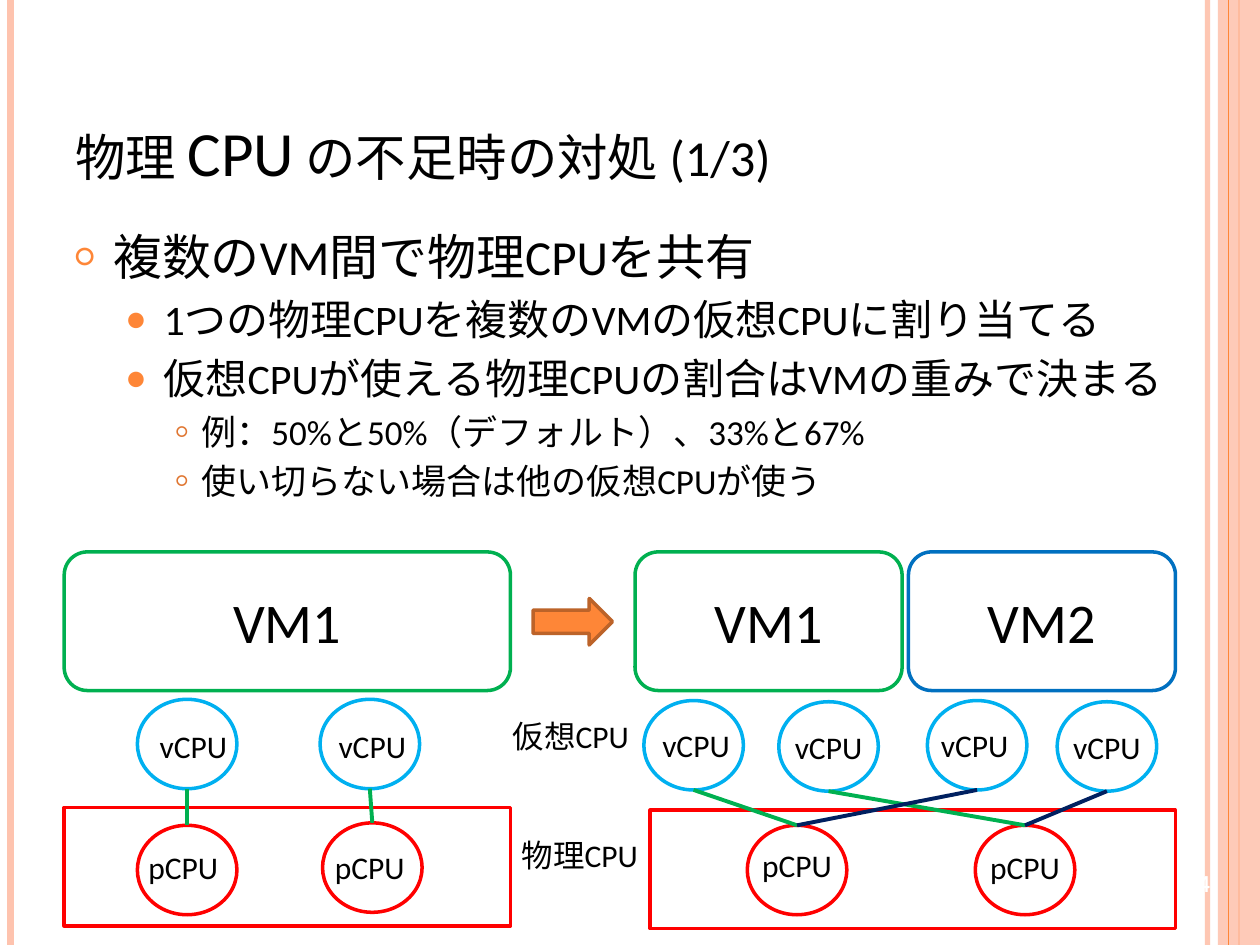
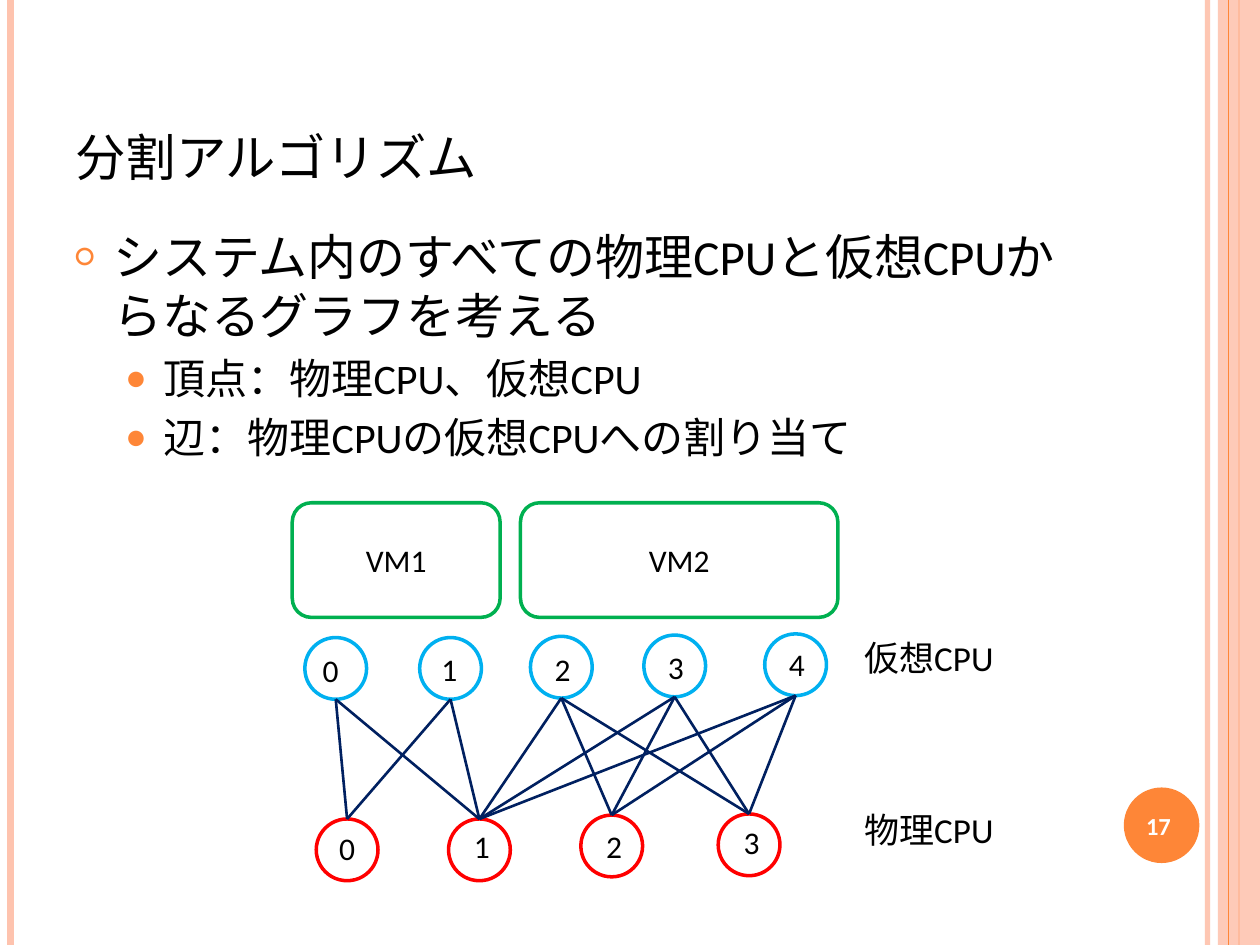
"""Builds two slides on sharing physical CPUs among virtual machines."""
import pptx
import pptx.dml.color
import pptx.enum.shapes
import pptx.enum.text
import pptx.oxml
import pptx.oxml.ns
import pptx.util

Pt = pptx.util.Pt
RGBColor = pptx.dml.color.RGBColor
Kind = pptx.enum.shapes.MSO_SHAPE
Align = pptx.enum.text.PP_ALIGN
Anchor = pptx.enum.text.MSO_ANCHOR

FONT = "Calibri"
BLACK = RGBColor(0, 0, 0)
WHITE = RGBColor(255, 255, 255)
PEACH = RGBColor(0xFE, 0xC3, 0xAE)
ORANGE = RGBColor(0xFE, 0x86, 0x37)
RUST = RGBColor(0xE0, 0x76, 0x31)
BROWN = RGBColor(0xBC, 0x63, 0x29)
RED = RGBColor(255, 0, 0)
GREEN = RGBColor(0, 0xB0, 0x50)
BLUE = RGBColor(0, 0x70, 0xC0)
SKY = RGBColor(0, 0xB0, 0xF0)
NAVY = RGBColor(0, 0x20, 0x60)

WIDTH, HEIGHT = 720, 540
LEVELS = [
    dict(size=28, left=21.6, hang=21.6, mark="○", tint=ORANGE, scale=70,
         gap='<a:spcPts val="600"/>'),
    dict(size=24, left=50.4, hang=21.6, mark="●", tint=ORANGE, scale=80,
         gap='<a:spcPct val="20000"/>'),
    dict(size=20, left=72, hang=14.4, mark="○", tint=RUST, scale=60,
         gap='<a:spcPct val="20000"/>'),
]


def fade(item, share):
    """Make the colour of an item partly opaque."""
    for color in item._element.spPr.iter(pptx.oxml.ns.qn("a:srgbClr")):
        alpha = color.makeelement(pptx.oxml.ns.qn("a:alpha"), {"val": str(share * 1000)})
        color.append(alpha)


def write(frame, text, size=18, color=BLACK, bold=False, small=False,
          align=Align.CENTER, anchor=Anchor.MIDDLE, inset=(0, 0), first=True):
    """Write one formatted paragraph into a text frame."""
    frame.word_wrap = True
    frame.vertical_anchor = anchor
    frame.margin_left = frame.margin_right = Pt(inset[0])
    frame.margin_top = frame.margin_bottom = Pt(inset[1])
    para = frame.paragraphs[0] if first else frame.add_paragraph()
    para.alignment = align
    run = para.add_run()
    run.text = text
    run.font.name = FONT
    run.font.size = Pt(size)
    run.font.bold = bold
    run.font.color.rgb = color
    if small:
        run.font._element.set("cap", "small")
    return para


def frame(slide, x, y, w, h):
    """Add an empty text box and return its frame."""
    return slide.shapes.add_textbox(Pt(x), Pt(y), Pt(w), Pt(h)).text_frame


def shape(slide, kind, x, y, w, h, line=None, fill=None):
    """Add a preset shape with an optional outline and fill."""
    item = slide.shapes.add_shape(kind, Pt(x), Pt(y), Pt(w), Pt(h))
    item.shadow.inherit = False
    if fill is None:
        item.fill.background()
    else:
        item.fill.solid()
        item.fill.fore_color.rgb = fill
    if line is None:
        item.line.fill.background()
    else:
        item.line.color.rgb = line
        item.line.width = Pt(2)
    return item


def line(slide, start, end, color, width):
    """Add a straight line between two points."""
    item = slide.shapes.add_connector(
        pptx.enum.shapes.MSO_CONNECTOR.STRAIGHT, *map(Pt, (*start, *end)))
    item.line.color.rgb = color
    item.line.width = Pt(width)
    props = item._element.spPr
    props.append(props.makeelement(pptx.oxml.ns.qn("a:effectLst"), {}))
    return item


def rule(slide, x, color, width):
    """Add a line over the full slide height."""
    return line(slide, (x, 0), (x, HEIGHT), color, width)


def node(slide, text, x, y, w, h, color, dx=0, dy=0):
    """Draw a labelled CPU; return its top and bottom points."""
    shape(slide, Kind.OVAL, x, y, w, h, line=color)
    write(frame(slide, x + dx, y + dy, w, h), text)
    return (x + w / 2, y), (x + w / 2, y + h)


def row(slide, items, w, h, color):
    """Draw a row of CPUs given as text, place and label shift."""
    return [node(slide, text, x, y, w, h, color, dx, dy)
            for text, x, y, dx, dy in items]


def link(slide, uppers, lowers, pairs, color, width):
    """Join upper CPUs to lower CPUs by index."""
    for up, low in pairs:
        line(slide, uppers[up][1], lowers[low][0], color, width)


def guest(slide, text, x, y, w, h, color, size):
    """Draw a virtual machine box."""
    item = shape(slide, Kind.ROUNDED_RECTANGLE, x, y, w, h, line=color)
    write(item.text_frame, text, size=size)


def bullets(slide, w, h, lines):
    """Fill the body with bullets of the given levels."""
    body = frame(slide, 36, 126, w, h)
    for count, (level, text) in enumerate(lines):
        style = LEVELS[level]
        para = write(body, text, size=style["size"], align=Align.LEFT,
                     anchor=Anchor.TOP, inset=(7.2, 3.6), first=count == 0)
        props = para._p.get_or_add_pPr()
        props.set("marL", str(Pt(style["left"])))
        props.set("indent", str(-Pt(style["hang"])))
        parts = (
            f'<a:spcBef>{style["gap"]}</a:spcBef>',
            f'<a:buClr><a:srgbClr val="{style["tint"]}"/></a:buClr>',
            f'<a:buSzPct val="{style["scale"] * 1000}"/>',
            f'<a:buFont typeface="{FONT}"/>',
            f'<a:buChar char="{style["mark"]}"/>',
        )
        space = pptx.oxml.ns.nsdecls("a")
        root = pptx.oxml.parse_xml(f'<a:pPr {space}>{"".join(parts)}</a:pPr>')
        for part in list(root):
            props.append(part)


def start(deck, title, width):
    """Add a slide with its side bands and title."""
    slide = deck.slides.add_slide(deck.slide_layouts[6])
    fade(rule(slide, 690, PEACH, 3), 93)
    rule(slide, 6, PEACH, 4.5)
    rule(slide, 708, ORANGE, 1.5)
    fade(shape(slide, Kind.RECTANGLE, 696, 0, 24, HEIGHT, fill=PEACH), 87)
    rule(slide, 702, ORANGE, 0.75)
    write(frame(slide, 36, 21.6, width, 90), title, size=36, small=True,
          align=Align.LEFT, anchor=Anchor.BOTTOM, inset=(7.2, 3.6))
    return slide


def number(slide, text, x, y):
    """Write the slide number."""
    write(frame(slide, x, y, 48, 41), text, size=14, color=WHITE, bold=True)


def sharing(deck):
    """Build the slide on sharing physical CPUs."""
    slide = start(deck, "物理 CPU の不足時の対処 (1/3)", 588)
    bullets(slide, 648, 356, [
        (0, "複数のVM間で物理CPUを共有"),
        (1, "1つの物理CPUを複数のVMの仮想CPUに割り当てる"),
        (1, "仮想CPUが使える物理CPUの割合はVMの重みで決まる"),
        (2, "例：50%と50%（デフォルト）、33%と67%"),
        (2, "使い切らない場合は他の仮想CPUが使う"),
    ])
    number(slide, "4", 664, 484)
    shape(slide, Kind.RECTANGLE, 36.7, 461.5, 255, 67.7, line=RED)
    shape(slide, Kind.RECTANGLE, 371.5, 463, 300.2, 67.7, line=RED)
    size = (56.9, 51.1)
    virtual = row(slide, [
        ("vCPU", 78.5, 399.6, 3.6, 1), ("vCPU", 182.9, 399.6, 1.4, 1),
        ("vCPU", 367.9, 400.3, 1.4, 0), ("vCPU", 445, 401, 0, 0),
        ("vCPU", 529.9, 400.3, -1.4, 0), ("vCPU", 604.1, 401, 0, 0),
    ], *size, SKY)
    real = row(slide, [
        ("pCPU", 78.5, 471.6, -2.2, -1.8), ("pCPU", 184.3, 470.2, -1.4, -0.4),
        ("pCPU", 427, 471.6, 0, -3.2), ("pCPU", 557.3, 471.6, 0, -1.8),
    ], *size, RED)
    link(slide, virtual, real, [(0, 0), (1, 1), (2, 2), (3, 3)], GREEN, 2.25)
    link(slide, virtual, real, [(4, 2), (5, 3)], NAVY, 2.25)
    for text, x, w, color in [("VM1", 36.7, 255, GREEN), ("VM1", 362.9, 152.6, GREEN),
                              ("VM2", 519.1, 152.6, BLUE)]:
        guest(slide, text, x, 315.4, w, 79.2, color, 32)
    shape(slide, Kind.RIGHT_ARROW, 304.6, 342, 45.4, 26.6, line=BROWN, fill=ORANGE)
    write(frame(slide, 276.5, 406, 99.4, 29), "仮想CPU")
    write(frame(slide, 281.5, 474, 99.4, 29), "物理CPU")


def graph(deck):
    """Build the slide on the CPU graph."""
    slide = start(deck, "分割アルゴリズム", 618)
    bullets(slide, 588, 384, [
        (0, "システム内のすべての物理CPUと仮想CPUからなるグラフを考える"),
        (1, "頂点：物理CPU、仮想CPU"),
        (1, "辺：物理CPUの仮想CPUへの割り当て"),
    ])
    shape(slide, Kind.OVAL, 642.2, 450, 43.2, 43.2, fill=ORANGE)
    number(slide, "17", 638, 451.4)
    size = (35.3, 35.3)
    virtual = row(slide, [
        ("0", 174.2, 364.3, -2.9, 0.7), ("1", 239.8, 364.3, -0.7, 0),
        ("2", 303.1, 363.6, 0.7, 0.7), ("3", 367.9, 362.9, 0.7, 0.7),
        ("4", 437, 362.2, 0.7, -0.7),
    ], *size, SKY)
    real = row(slide, [
        ("0", 180.7, 468, 0, -1.4), ("1", 256.3, 468, 1.4, -2.2),
        ("2", 331.9, 465.8, 1.4, 0), ("3", 410.4, 465.1, 1.4, -1.4),
    ], *size, RED)
    for ups, lows in [((0, 1), (0, 1)), ((2, 3, 4), (1, 2, 3))]:
        pairs = [(up, low) for up in ups for low in lows]
        link(slide, virtual, real, pairs, NAVY, 1.5)
    guest(slide, "VM1", 167, 287.3, 118.8, 65.5, GREEN, 18)
    guest(slide, "VM2", 297.4, 287.3, 181.4, 65.5, GREEN, 18)
    for text, y in [("仮想CPU", 360), ("物理CPU", 458.6)]:
        write(frame(slide, 486.7, y, 144, 36.7), text, size=20,
              align=Align.LEFT, anchor=Anchor.TOP, inset=(7.2, 3.6))


def main():
    """Build and save the deck."""
    deck = pptx.Presentation()
    deck.slide_width, deck.slide_height = Pt(WIDTH), Pt(HEIGHT)
    sharing(deck)
    graph(deck)
    deck.save("out.pptx")


if __name__ == "__main__":
    main()
